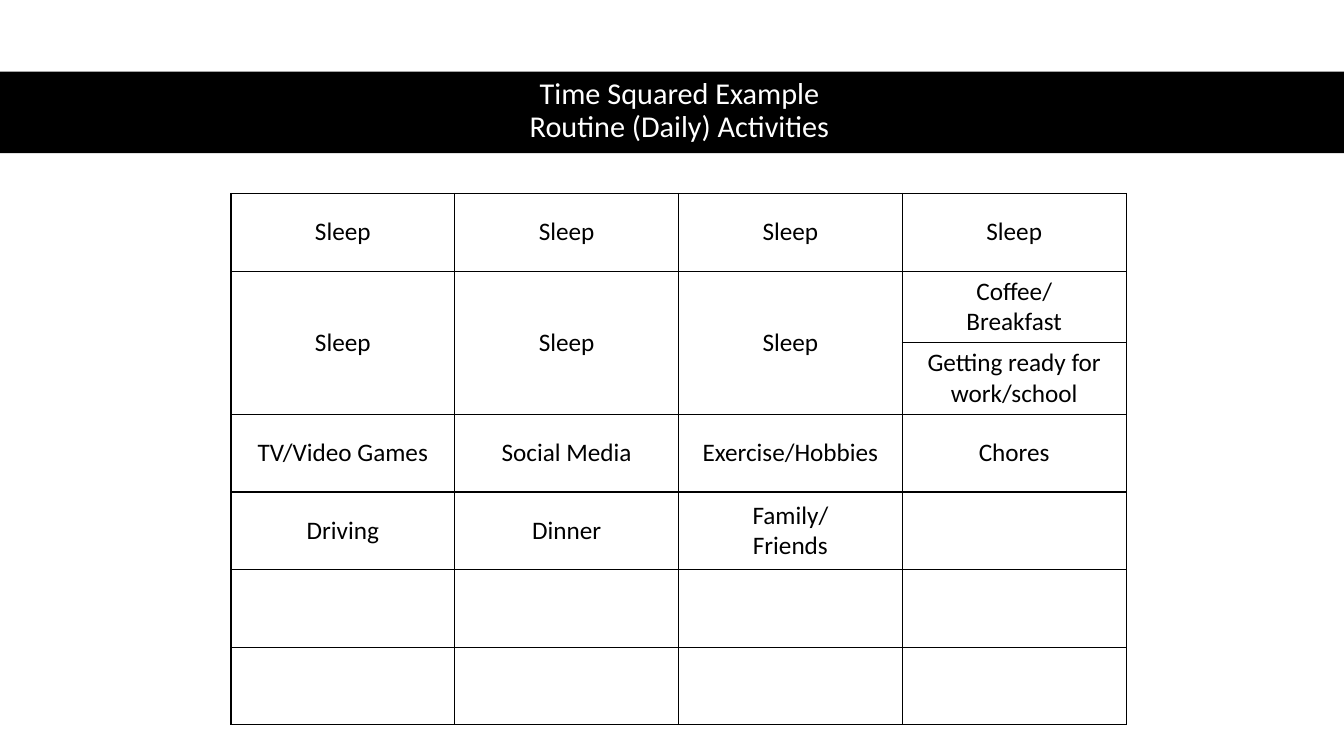
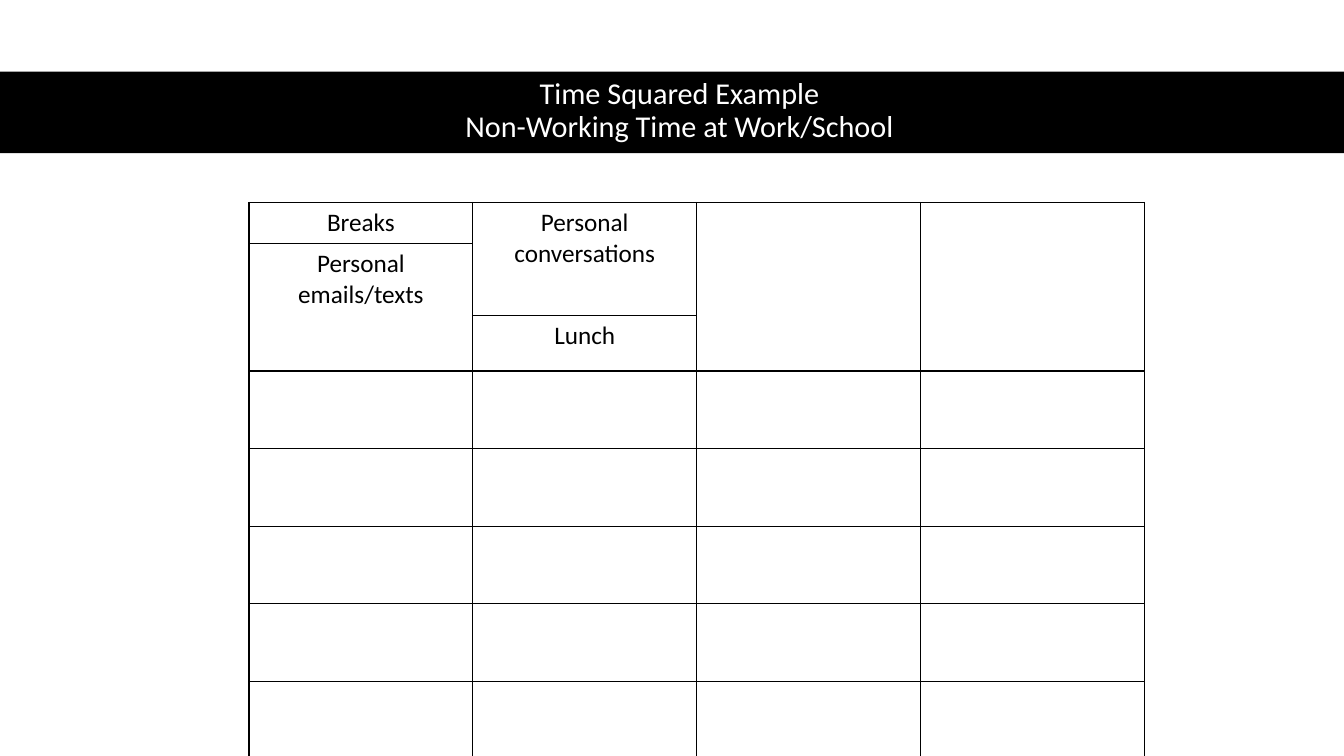
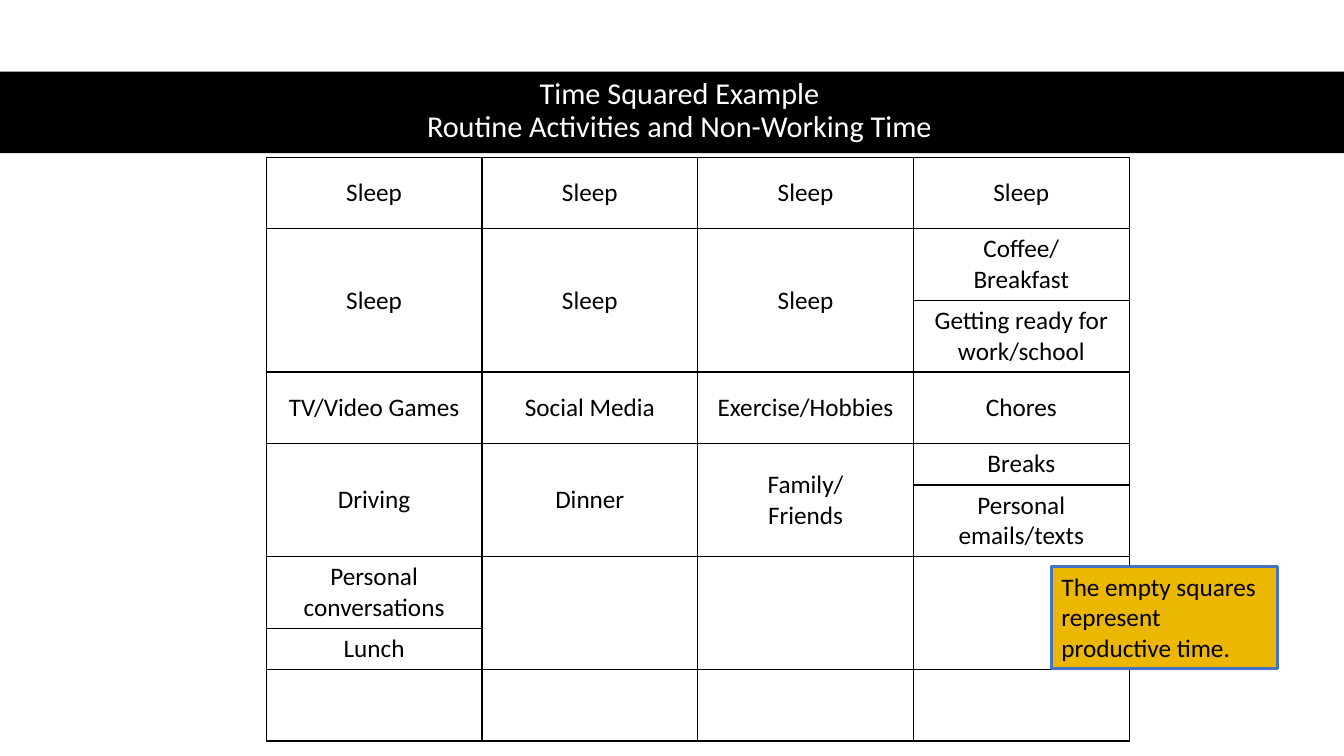
from copy import deepcopy

from pptx import Presentation
from pptx.dml.color import RGBColor
from pptx.enum.shapes import MSO_SHAPE
from pptx.enum.text import MSO_ANCHOR, MSO_AUTO_SIZE, PP_ALIGN
from pptx.oxml import parse_xml
from pptx.oxml.ns import nsdecls, qn
from pptx.util import Inches, Pt

CENTER, LEFT = PP_ALIGN.CENTER, PP_ALIGN.LEFT
TOP, MIDDLE = MSO_ANCHOR.TOP, MSO_ANCHOR.MIDDLE
RECT = MSO_SHAPE.RECTANGLE
TITLE_ONLY = 5

COLORS = {"black": "000000", "white": "FFFFFF", "gold": "EBB700", "blue": "4472C4"}
TITLE_FONT = {"name": "Calibri", "size": Pt(21.6)}
BODY_FONT = {"name": "Calibri", "size": Pt(18)}

UP = "^"  # the cell is merged with the one above it
EMPTY = [""] * 4
MORNING = [
    ["Sleep"] * 4,
    ["Sleep"] * 3 + ["Coffee/\vBreakfast"],
    [UP] * 3 + ["Getting ready for work/school"],
    ["TV/Video Games", "Social Media", "Exercise/Hobbies", "Chores"],
]
EVENING = ["Driving", "Dinner", "Family/\vFriends"]

SLIDES = [
    {
        "title": "Routine (Daily) Activities",
        "at": (2.29, 1.92), "col": 2.22, "anchor": MIDDLE,
        "heights": [0.77, 0.71, 0.71] + [0.77] * 4,
        "rows": MORNING + [EVENING + [""], EMPTY, EMPTY],
    },
    {
        "title": "Non-Working Time at Work/School",
        "at": (2.47, 2.01), "col": 2.22, "anchor": TOP,
        "heights": [0.41, 0.71, 0.55] + [0.77] * 5,
        "rows": [
            ["Breaks", "Personal conversations", "", ""],
            ["Personal emails/texts", UP, UP, UP],
            [UP, "Lunch", UP, UP],
        ] + [EMPTY] * 5,
    },
    {
        "title": "Routine Activities and Non-Working Time",
        "at": (2.64, 1.56), "col": 2.14, "anchor": MIDDLE,
        "heights": [0.71] * 4 + [0.41, 0.71, 0.71, 0.41, 0.71],
        "rows": MORNING + [
            EVENING + ["Breaks"],
            [UP] * 3 + ["Personal emails/texts"],
            ["Personal conversations", "", "", ""],
            ["Lunch", UP, UP, UP],
            EMPTY,
        ],
        "note": "The empty squares represent productive time.",
    },
]


def rgb(name):
    return RGBColor.from_string(COLORS[name])


def write(tf, text, font, color, align):
    """Set one paragraph; line breaks get the same format as the runs."""
    p = tf.paragraphs[0]
    p.text = text
    p.alignment = align
    for r in p.runs:
        for key, value in font.items():
            setattr(r.font, key, value)
        r.font.color.rgb = rgb(color)
    for br in p._p.findall(qn("a:br")):
        br.insert(0, deepcopy(p.runs[0]._r.rPr))
    return p


def add_rect(slide, box, fill):
    sp = slide.shapes.add_shape(RECT, *map(Inches, box))
    sp.shadow.inherit = False
    sp.fill.solid()
    sp.fill.fore_color.rgb = rgb(fill)
    sp.line.fill.background()
    return sp


def add_title(slide, subtitle):
    band = add_rect(slide, (0, 0.71, 13.33, 0.81), "black")
    title = slide.shapes.title
    title._element.addprevious(band._element)
    title.left, title.top, title.width, title.height = map(Inches, (0.61, 0.7, 12.26, 0.81))
    tf = title.text_frame
    tf.auto_size = MSO_AUTO_SIZE.NONE
    tf.vertical_anchor = MIDDLE
    p = write(tf, f"Time Squared Example\v{subtitle}", TITLE_FONT, "white", CENTER)
    p.line_spacing = 0.9


def add_borders(cell):
    tcPr = cell._tc.get_or_add_tcPr()
    for i, side in enumerate(("lnL", "lnR", "lnT", "lnB")):
        tcPr.insert(i, parse_xml(
            f'<a:{side} {nsdecls("a")} w="{Pt(1)}"><a:solidFill>'
            f'<a:srgbClr val="{COLORS["black"]}"/></a:solidFill></a:{side}>'))


def add_schedule(slide, rows, heights, at, col, anchor):
    cols = len(rows[0])
    box = (*at, col * cols, sum(heights))
    table = slide.shapes.add_table(len(rows), cols, *map(Inches, box)).table
    table.first_row = table.horz_banding = False
    for column in table.columns:
        column.width = Inches(col)
    for row, height in zip(table.rows, heights):
        row.height = Inches(height)
    for i, row in enumerate(rows):
        for j, text in enumerate(row):
            cell = table.cell(i, j)
            cell.fill.background()
            add_borders(cell)
            cell.vertical_anchor = anchor
            if text == UP:
                continue
            if text:
                write(cell.text_frame, text, BODY_FONT, "black", CENTER)
            last = i
            while last + 1 < len(rows) and rows[last + 1][j] == UP:
                last += 1
            if last > i:
                cell.merge(table.cell(last, j))


def add_note(slide, text):
    sp = add_rect(slide, (10.43, 5.62, 2.24, 1.01), "gold")
    sp.line.color.rgb = rgb("blue")
    sp.line.width = Pt(2.25)
    tf = sp.text_frame
    tf.word_wrap = True
    tf.auto_size = MSO_AUTO_SIZE.SHAPE_TO_FIT_TEXT
    tf.vertical_anchor = TOP
    write(tf, text, BODY_FONT, "black", LEFT)


def main():
    prs = Presentation()
    prs.slide_width, prs.slide_height = Inches(13.33), Inches(7.5)
    for s in SLIDES:
        slide = prs.slides.add_slide(prs.slide_layouts[TITLE_ONLY])
        add_title(slide, s["title"])
        add_schedule(slide, s["rows"], s["heights"], s["at"], s["col"], s["anchor"])
        if "note" in s:
            add_note(slide, s["note"])
    prs.save("out.pptx")


if __name__ == "__main__":
    main()
